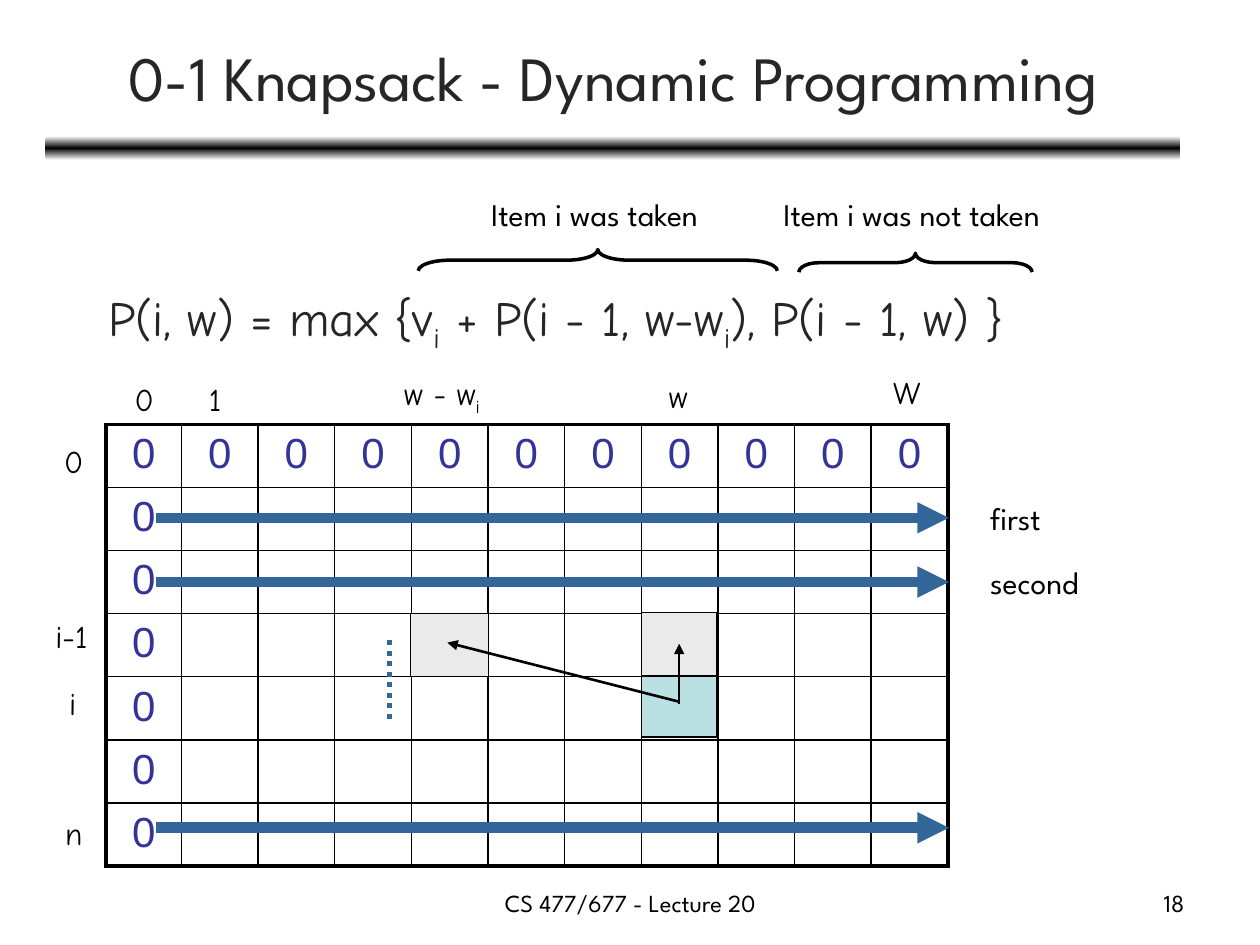
import copy
from dataclasses import dataclass

import lxml.etree
import pptx
import pptx.dml.color
import pptx.enum.dml
import pptx.enum.shapes
import pptx.enum.text
import pptx.oxml.ns
import pptx.util

Pt = pptx.util.Pt
qn = pptx.oxml.ns.qn
Align = pptx.enum.text.PP_ALIGN
Anchor = pptx.enum.text.MSO_ANCHOR
Shape = pptx.enum.shapes.MSO_SHAPE
Dash = pptx.enum.dml.MSO_LINE


@dataclass(frozen=True)
class Theme:
    sans: str = "League Spartan"
    hand: str = "Comic Neue"
    digits: str = "Arial"
    ink: str = "000000"
    soft_ink: str = "262626"
    paper: str = "FFFFFF"
    digit: str = "333399"
    sweep: str = "336699"
    current: str = "BBE0E3"
    previous: str = "EAEAEA"
    title_size: float = 36
    formula_size: float = 28
    digit_size: float = 24
    label_size: float = 18
    footer_size: float = 14


THEME = Theme()


@dataclass(frozen=True)
class Label:
    """Text in a frame; pieces alternate between normal and subscript."""
    pieces: tuple[str, ...]
    left: float
    top: float
    width: float
    height: float = 28.8
    font: str = THEME.hand
    size: float = THEME.label_size
    color: str = THEME.ink
    align: Align = Align.LEFT
    anchor: Anchor = Anchor.TOP
    wrap: bool = True


@dataclass(frozen=True)
class Stroke:
    start: tuple[float, float]
    end: tuple[float, float]
    width: float
    color: str = THEME.ink
    arrow: bool = True
    dotted: bool = False


@dataclass(frozen=True)
class Block:
    left: float
    top: float
    width: float
    height: float
    fill: str


@dataclass(frozen=True)
class Brace:
    left: float
    top: float
    width: float
    height: float
    curl: float


def rgb(color: str) -> pptx.dml.color.RGBColor:
    return pptx.dml.color.RGBColor.from_string(color)


def add_span(para, text: str, font: str, size: float, color: str, subscript: bool = False) -> None:
    span = para.add_run()
    span.text = text
    span.font.name, span.font.size = font, Pt(size)
    span.font.color.rgb = rgb(color)
    if subscript:
        span.font._element.set("baseline", "-25000")


def draw_label(page, label: Label) -> None:
    box = page.shapes.add_textbox(Pt(label.left), Pt(label.top), Pt(label.width), Pt(label.height))
    frame = box.text_frame
    frame.word_wrap, frame.vertical_anchor = label.wrap, label.anchor
    para = frame.paragraphs[0]
    para.alignment = label.align
    for index, piece in enumerate(label.pieces):
        add_span(para, piece, label.font, label.size, label.color, index % 2 == 1)


def draw_stroke(page, stroke: Stroke) -> None:
    line = page.shapes.add_connector(pptx.enum.shapes.MSO_CONNECTOR.STRAIGHT,
                                     *map(Pt, stroke.start + stroke.end))
    line.line.width = Pt(stroke.width)
    line.line.color.rgb = rgb(stroke.color)
    if stroke.dotted:
        line.line.dash_style = Dash.ROUND_DOT
    if stroke.arrow:
        lxml.etree.SubElement(line.line._get_or_add_ln(), qn("a:tailEnd"), type="triangle")
    lxml.etree.SubElement(line._element.spPr, qn("a:effectLst"))


def draw_block(page, block: Block) -> None:
    shape = page.shapes.add_shape(Shape.RECTANGLE, Pt(block.left), Pt(block.top),
                                  Pt(block.width), Pt(block.height))
    shape.shadow.inherit = False
    shape.fill.solid()
    shape.fill.fore_color.rgb = rgb(block.fill)
    shape.line.color.rgb = rgb(THEME.ink)
    shape.line.width = Pt(0.75)


def draw_brace(page, brace: Brace) -> None:
    shape = page.shapes.add_shape(Shape.LEFT_BRACE, Pt(brace.left), Pt(brace.top),
                                  Pt(brace.width), Pt(brace.height))
    shape.adjustments[0], shape.adjustments[1] = brace.curl, 0.5
    shape.rotation = 90
    shape.shadow.inherit = False
    shape.fill.background()
    shape.line.color.rgb = rgb(THEME.ink)
    shape.line.width = Pt(2)


def draw_rule(page) -> None:
    bar = page.shapes.add_shape(Shape.ROUNDED_RECTANGLE, Pt(26), Pt(77.8), Pt(648.7), Pt(13.7))
    bar.shadow.inherit = False
    bar.line.fill.background()
    bar.fill.gradient()
    bar.fill.gradient_angle = 90
    stops = bar._element.spPr.find(qn("a:gradFill")).find(qn("a:gsLst"))
    stops.insert(1, copy.deepcopy(stops[0]))
    for stop, position, color in zip(bar.fill.gradient_stops, (0, 0.5, 1),
                                     (THEME.paper, THEME.ink, THEME.paper)):
        stop.position, stop.color.rgb = position, rgb(color)


def set_border(cell, side: str, width: float) -> None:
    edge = lxml.etree.Element(qn(f"a:ln{side}"), w=str(Pt(width)))
    fill = lxml.etree.SubElement(edge, qn("a:solidFill"))
    lxml.etree.SubElement(fill, qn("a:srgbClr"), val=THEME.ink)
    cell._tc.get_or_add_tcPr().append(edge)


def draw_grid(page, rows: int = 7, columns: int = 11) -> None:
    grid = page.shapes.add_table(rows, columns, Pt(60.5), Pt(242.6), Pt(481.2), Pt(35 * rows)).table
    grid.first_row = grid.horz_banding = False
    for index, column in enumerate(grid.columns):
        column.width = Pt(43.8 if index else 43.2)
    for row in range(rows):
        grid.rows[row].height = Pt(35)
        for column in range(columns):
            cell = grid.cell(row, column)
            outer = {"L": column == 0, "R": column == columns - 1, "T": row == 0, "B": row == rows - 1}
            for side, is_outer in outer.items():
                set_border(cell, side, 2.25 if is_outer else 1)
            cell.fill.background()
            if row == 0 or column == 0:
                para = cell.text_frame.paragraphs[0]
                para.alignment = Align.CENTER
                add_span(para, "0", THEME.digits, THEME.digit_size, THEME.digit)


def main() -> None:
    deck = pptx.Presentation()
    deck.slide_width, deck.slide_height = Pt(720), Pt(540)
    page = deck.slides.add_slide(deck.slide_layouts[6])

    # Title, rule and footer
    draw_rule(page)
    draw_label(page, Label(("0-1 Knapsack - Dynamic Programming",), 26.6, 7.9, 648, 71.3, THEME.sans,
                           THEME.title_size, THEME.soft_ink, Align.CENTER, Anchor.MIDDLE))
    for text, left, width, align in (("CS 477/677 - Lecture 20", 246.2, 228.2, Align.CENTER),
                                     ("18", 516.2, 167.8, Align.RIGHT)):
        draw_label(page, Label((text,), left, 504, width, 25.2, THEME.sans, THEME.footer_size, align=align))

    # Recurrence with its two braces
    draw_label(page, Label(("P(i, w) = max {v", "i", " + P(i - 1, w-w", "i", "), P(i - 1, w) }"),
                           54.7, 160.6, 620, 56.9, size=THEME.formula_size, color=THEME.soft_ink))
    draw_brace(page, Brace(335.5, 46.1, 12.2, 205.2, 1.47))
    draw_brace(page, Brace(517.7, 83.5, 10.8, 133.2, 1.06))
    for text, left, width in (("Item i was taken", 273.6, 164.2), ("Item i was not taken", 440.6, 198)):
        draw_label(page, Label((text,), left, 108, width, font=THEME.sans))

    # Current cell lies under the grid, the cells it reads lie over it
    draw_block(page, Block(366.5, 385.2, 43.2, 36, THEME.current))
    draw_grid(page)
    draw_block(page, Block(366.5, 349.9, 43.2, 36, THEME.previous))
    draw_block(page, Block(234.7, 350.6, 44.6, 36, THEME.previous))
    draw_stroke(page, Stroke((388.1, 402.5), (388.1, 367.9), 1.5))
    draw_stroke(page, Stroke((388.1, 401), (255.6, 367.2), 1.5))

    # Column and row headings
    for pieces, left, top, width in ((("0",), 69.8, 213.8, 25.2), (("1",), 112.3, 213.8, 22.3),
                                     (("w - w", "i"), 223.9, 210.2, 63.4),
                                     (("w",), 375.1, 211.7, 28.1), (("W",), 503.3, 209.5, 34.6)):
        draw_label(page, Label(pieces, left, top, width, wrap=len(pieces) > 1))
    for text, left, top, width in (("0", 29.5, 249.1, 25.2), ("i-1", 24.5, 349.2, 35.3),
                                   ("i", 32.4, 387.4, 19.4), ("n", 30.2, 461.5, 23.8)):
        draw_label(page, Label((text,), left, top, width, wrap=False))

    # Row sweeps in filling order
    for text, height, width in (("first", 295.9, 43.2), ("second", 332.6, 80.6), ("", 473, 0)):
        draw_stroke(page, Stroke((89.3, height), (542.2, height), 6, THEME.sweep))
        if text:
            draw_label(page, Label((text,), 558.7, height - 14.4, width, font=THEME.sans, wrap=False))
    draw_stroke(page, Stroke((222.5, 365.8), (222.5, 413.3), 3, THEME.sweep, arrow=False, dotted=True))

    deck.save("out.pptx")


if __name__ == "__main__":
    main()
